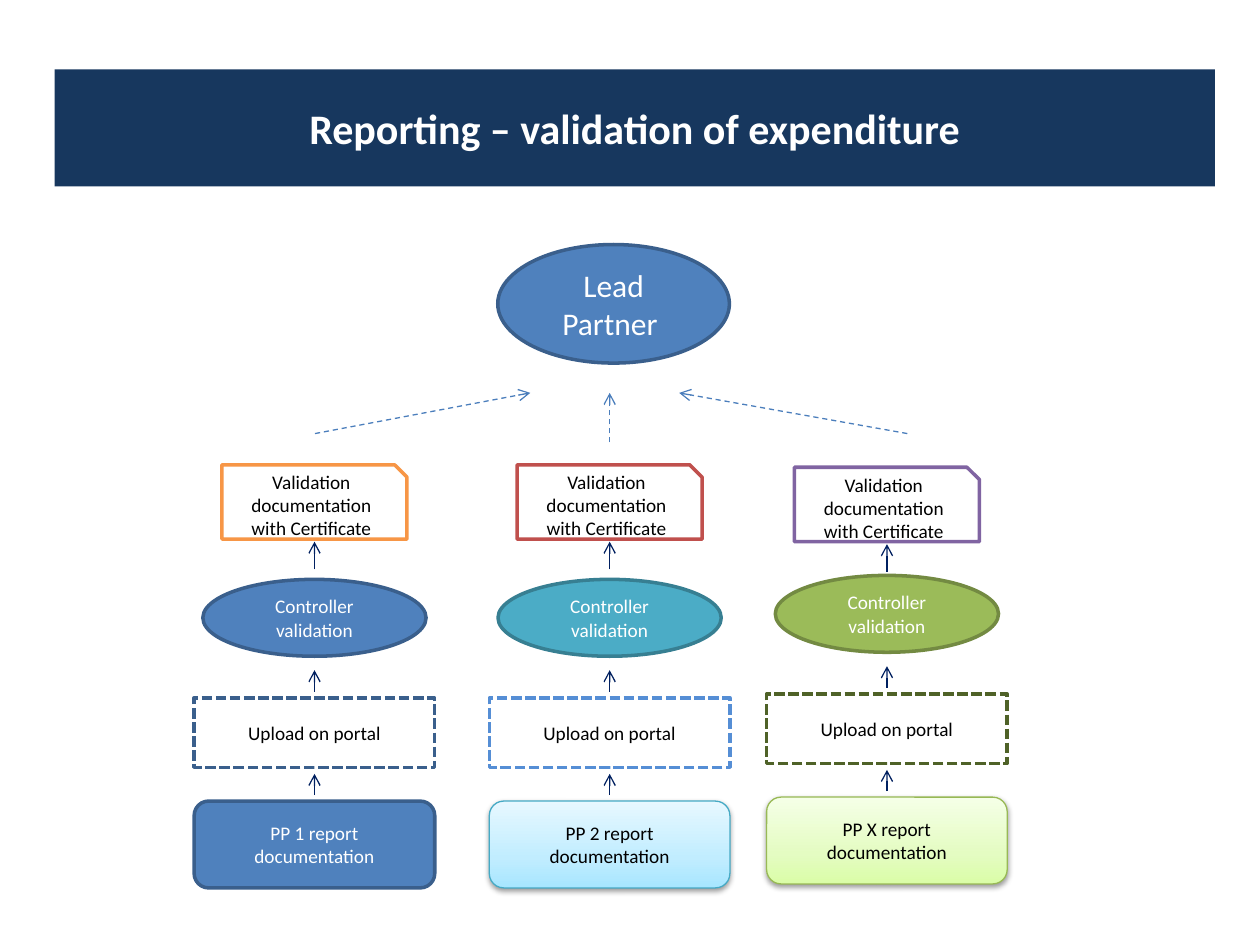
from copy import deepcopy

from lxml import etree
from pptx import Presentation
from pptx import util as u
from pptx.dml import color
from pptx.enum import dml, shapes, text
from pptx.oxml import ns

KIND = shapes.MSO_SHAPE
DASH = dml.MSO_LINE
NAVY, BLUE, EDGE = "17375E", "4F81BD", "3A5F8C"
NOTE = "Validation documentation with Certificate"


def rgb(code):
    return color.RGBColor.from_string(code)


def write(shape, words, size=11, tint="000000", bold=False):
    frame = shape.text_frame
    frame.word_wrap = True
    frame.auto_size = text.MSO_AUTO_SIZE.NONE
    frame.vertical_anchor = text.MSO_ANCHOR.MIDDLE
    para = frame.paragraphs[0]
    para.alignment = text.PP_ALIGN.CENTER
    run = para.add_run()
    run.text = words
    run.font.name = "Calibri"
    run.font.size = u.Pt(size)
    run.font.bold = bold
    run.font.color.rgb = rgb(tint)


class Deck:
    font = "FFFFFF"
    thick, thin = 2, 0.75

    def __init__(self):
        self.show = Presentation()
        self.show.slide_width = u.Cm(25.4)
        self.show.slide_height = u.Cm(19.05)
        self.slide = self.show.slides.add_slide(self.show.slide_layouts[5])

    def title(self, words, left, top, wide, high):
        head = self.slide.shapes.title
        head.left, head.top = u.Cm(left), u.Cm(top)
        head.width, head.height = u.Cm(wide), u.Cm(high)
        head.fill.solid()
        head.fill.fore_color.rgb = rgb(NAVY)
        write(head, words, size=24, tint=self.font, bold=True)

    def node(self, kind, mid, top, size, fill, edge, width=thick, dash=None):
        wide, high = size
        shape = self.slide.shapes.add_shape(
            kind, u.Cm(mid - wide / 2), u.Cm(top), u.Cm(wide), u.Cm(high))
        if fill:
            shape.fill.solid()
            shape.fill.fore_color.rgb = rgb(fill)
        else:
            shape.fill.background()
        shape.line.color.rgb = rgb(edge)
        shape.line.width = u.Pt(width)
        if dash:
            shape.line.dash_style = dash
        shape.shadow.inherit = False
        return shape

    def blend(self, shape, tints):
        shape.fill.gradient()
        shape.fill.gradient_angle = 90
        group = shape.element.xpath(".//a:gsLst")[0]
        group.insert(1, deepcopy(group[0]))
        for stop, place, tint in zip(shape.fill.gradient_stops, (0, 0.35, 1), tints):
            stop.position = place
            stop.color.rgb = rgb(tint)

    def shade(self, shape):
        effect = shape.element.xpath("./p:spPr/a:effectLst")[0]
        drop = etree.SubElement(
            effect, ns.qn("a:outerShdw"), blurRad=str(u.Pt(3.1)),
            dist=str(u.Pt(1.6)), dir="5400000", rotWithShape="0")
        tint = etree.SubElement(drop, ns.qn("a:srgbClr"), val="000000")
        etree.SubElement(tint, ns.qn("a:alpha"), val="38000")

    def arrow(self, start, end, tint="002060", dash=None):
        line = self.slide.shapes.add_connector(
            shapes.MSO_CONNECTOR.STRAIGHT, *map(u.Cm, start + end))
        line.line.color.rgb = rgb(tint)
        line.line.width = u.Pt(self.thin)
        if dash:
            line.line.dash_style = dash
        props = line.element.spPr
        etree.SubElement(props.find(ns.qn("a:ln")), ns.qn("a:tailEnd"), type="arrow")
        etree.SubElement(props, ns.qn("a:effectLst"))

    def lane(self, mid, name, report, check, upload, note, lift=0, sink=0):
        fill, edge = report
        plain = isinstance(fill, str)
        base = self.node(KIND.ROUNDED_RECTANGLE, mid, 16.15 - lift, (4.85, 1.75),
                         fill if plain else None, edge,
                         self.thick if plain else self.thin)
        if not plain:
            self.blend(base, fill)
            self.shade(base)
        write(base, f"{name} report documentation",
              tint=self.font if plain else "000000")
        oval = self.node(KIND.OVAL, mid, 11.68 - lift, (4.5, 1.55), *check)
        write(oval, "Controller validation", tint=self.font)
        box = self.node(KIND.RECTANGLE, mid, 14.07 - lift, (4.85, 1.4),
                        None, upload, dash=DASH.SQUARE_DOT)
        write(box, "Upload on portal")
        card = self.node(KIND.SNIP_1_RECTANGLE, mid, 9.37 + sink, (3.73, 1.5),
                         "FFFFFF", note)
        write(card, NOTE)
        for low, high, move in ((16.03, 15.6, -lift), (13.94, 13.51, -lift),
                                (11.48, 10.92, sink)):
            self.arrow((mid, low + move), (mid, high + move))


def main():
    deck = Deck()
    deck.title("Reporting – validation of expenditure", 1.1, 1.4, 23.39, 2.36)
    deck.lane(6.34, "PP 1", (BLUE, EDGE), (BLUE, EDGE), EDGE, "F79646")
    deck.lane(12.29, "PP 2", (("A7E6FF", "C1EDFF", "E7F8FF"), "46AAC5"),
              ("4BACC6", "377F92"), "558ED5", "C0504D")
    deck.lane(17.88, "PP X", (("DAFDA7", "E4FCC2", "F5FFE7"), "98B955"),
              ("9BBB59", "738A42"), "4F6228", "8064A2", lift=0.08, sink=0.05)
    for start, tip in (((6.35, 8.74), 10.69), ((18.29, 8.74), 13.69),
                       ((12.29, 8.92), 12.29)):
        deck.arrow(start, (tip, 7.92), tint="4B7EBC", dash=DASH.DASH)
    lead = deck.node(KIND.OVAL, 12.37, 4.93, (4.67, 2.39), BLUE, EDGE)
    write(lead, "Lead Partner ", size=18, tint=deck.font)
    deck.show.save("out.pptx")


if __name__ == "__main__":
    main()
